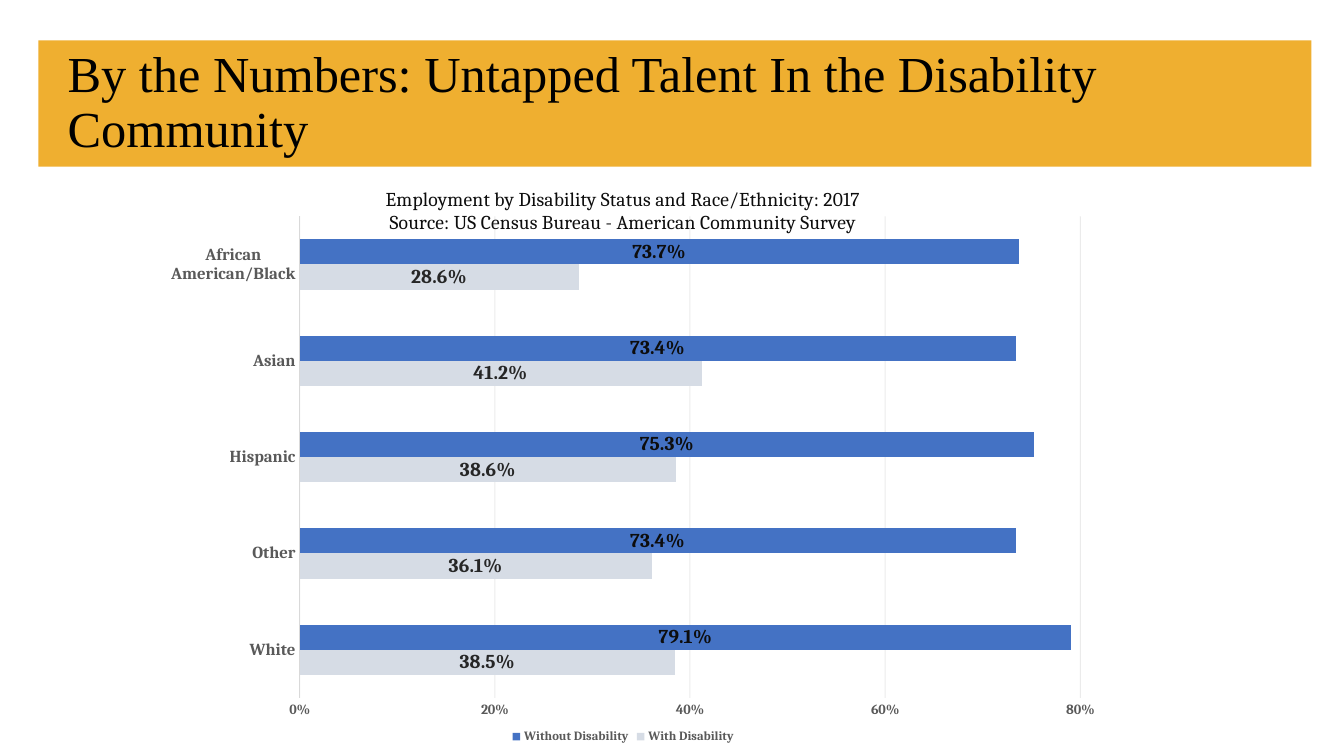
from dataclasses import dataclass

from lxml import etree
from pptx import Presentation
from pptx.chart.data import CategoryChartData
from pptx.dml.color import RGBColor
from pptx.enum.chart import XL_CHART_TYPE as ChartType
from pptx.enum.chart import XL_LABEL_POSITION as LabelPosition
from pptx.enum.chart import XL_LEGEND_POSITION as LegendPosition
from pptx.enum.chart import XL_TICK_MARK as TickMark
from pptx.enum.shapes import MSO_SHAPE
from pptx.enum.text import MSO_ANCHOR, MSO_AUTO_SIZE, PP_ALIGN
from pptx.oxml.ns import qn
from pptx.util import Cm, Pt


@dataclass(frozen=True)
class Theme:
    band: str = "EFAF30"
    title: str = "000000"
    chart_title: str = "0D0D0D"
    axis_text: str = "595959"
    rule: str = "D9D9D9"
    title_font: str = "Times New Roman"
    chart_font: str = "Cambria"
    title_size: int = 36
    chart_title_size: int = 14
    label_size: int = 14
    category_size: int = 12
    value_size: int = 10
    legend_size: int = 9


theme = Theme()


def set_font(font, name, size, color, bold=False):
    font.name = name
    font.size = Pt(size)
    font.bold = bold
    font.color.rgb = RGBColor.from_string(color)


def set_rule(line):
    line.width = Pt(0.75)
    line.color.rgb = RGBColor.from_string(theme.rule)


presentation = Presentation()
presentation.slide_width = Cm(33.87)
presentation.slide_height = Cm(19.05)
slide = presentation.slides.add_slide(presentation.slide_layouts[5])

# Title on its coloured band
title = slide.shapes.title
band = slide.shapes.add_shape(MSO_SHAPE.RECTANGLE, Cm(0.97), Cm(1.02), Cm(32.08), Cm(3.18))
band.shadow.inherit = False
band.fill.solid()
band.fill.fore_color.rgb = RGBColor.from_string(theme.band)
band.line.fill.background()
title._element.addprevious(band._element)

title.left, title.top, title.width, title.height = Cm(1.45), Cm(1.02), Cm(29.21), Cm(3.18)
title_frame = title.text_frame
title_frame.word_wrap = True
title_frame.auto_size = MSO_AUTO_SIZE.NONE
title_frame.vertical_anchor = MSO_ANCHOR.MIDDLE
paragraph = title_frame.paragraphs[0]
paragraph.alignment = PP_ALIGN.LEFT
paragraph.line_spacing = 0.9
run = paragraph.add_run()
run.text = "By the Numbers: Untapped Talent In the Disability Community"
set_font(run.font, theme.title_font, theme.title_size, theme.title)

# Employment chart: name, values, bar colour, label colour
employment = [
    ("With Disability", (0.385, 0.361, 0.386, 0.412, 0.286), "D6DCE5", "262626"),
    ("Without Disability", (0.791, 0.734, 0.753, 0.734, 0.737), "4472C4", "0D0D0D"),
]
chart_data = CategoryChartData(number_format="0.0%")
chart_data.categories = ["White", "Other", "Hispanic", "Asian", "African American/Black"]
for name, values, _, _ in employment:
    chart_data.add_series(name, values)
chart = slide.shapes.add_chart(
    ChartType.BAR_CLUSTERED, Cm(3.5), Cm(4.19), Cm(24.41), Cm(14.66), chart_data
).chart
set_font(chart.font, theme.chart_font, theme.value_size, theme.title)

chart_title_frame = chart.chart_title.text_frame
chart_title_lines = [
    "Employment by Disability Status and Race/Ethnicity: 2017",
    "Source: US Census Bureau - American Community Survey",
]
for index, line in enumerate(chart_title_lines):
    paragraph = chart_title_frame.add_paragraph() if index else chart_title_frame.paragraphs[0]
    run = paragraph.add_run()
    run.text = line
    set_font(run.font, theme.chart_font, theme.chart_title_size, theme.chart_title)
chart.chart_title.include_in_layout = False

plot = chart.plots[0]
plot.gap_width = 182
plot.overlap = 0
plot.vary_by_categories = False
for series, (_, _, bar_color, label_color) in zip(plot.series, employment):
    series.format.fill.solid()
    series.format.fill.fore_color.rgb = RGBColor.from_string(bar_color)
    series.invert_if_negative = False
    labels = series.data_labels
    labels.show_value = True
    labels.position = LabelPosition.CENTER
    labels.number_format = "0.0%"
    labels.number_format_is_linked = False
    set_font(labels.font, theme.chart_font, theme.label_size, label_color, bold=True)

category_axis, value_axis = chart.category_axis, chart.value_axis
for axis, size in ((category_axis, theme.category_size), (value_axis, theme.value_size)):
    axis.major_tick_mark = axis.minor_tick_mark = TickMark.NONE
    set_font(axis.tick_labels.font, theme.chart_font, size, theme.axis_text, bold=True)
category_axis.has_major_gridlines = False
set_rule(category_axis.format.line)
value_axis.minimum_scale = 0
value_axis.maximum_scale = 0.8
value_axis.major_unit = 0.2
value_axis.tick_labels.number_format = "0%"
value_axis.tick_labels.number_format_is_linked = False
value_axis.format.line.fill.background()
value_axis.has_major_gridlines = True
gridlines = value_axis.major_gridlines
set_rule(gridlines.format.line)
grid_color = next(gridlines._xAx.find(qn("c:majorGridlines")).iter(qn("a:srgbClr")))
etree.SubElement(grid_color, qn("a:alpha"), val="50000")

chart.has_legend = True
chart.legend.position = LegendPosition.BOTTOM
chart.legend.include_in_layout = False
set_font(chart.legend.font, theme.chart_font, theme.legend_size, theme.axis_text, bold=True)

# Fixed inner plot area, as fractions of the chart
plot_area = chart._chartSpace.chart.plotArea
for old_layout in plot_area.findall(qn("c:layout")):
    plot_area.remove(old_layout)
layout = etree.Element(qn("c:layout"))
plot_area.insert(0, layout)
manual = etree.SubElement(layout, qn("c:manualLayout"))
for tag, value in (
    ("layoutTarget", "inner"), ("xMode", "edge"), ("yMode", "edge"),
    ("x", "0.166"), ("y", "0.086"), ("w", "0.806"), ("h", "0.828"),
):
    etree.SubElement(manual, qn(f"c:{tag}"), val=value)

presentation.save("out.pptx")
